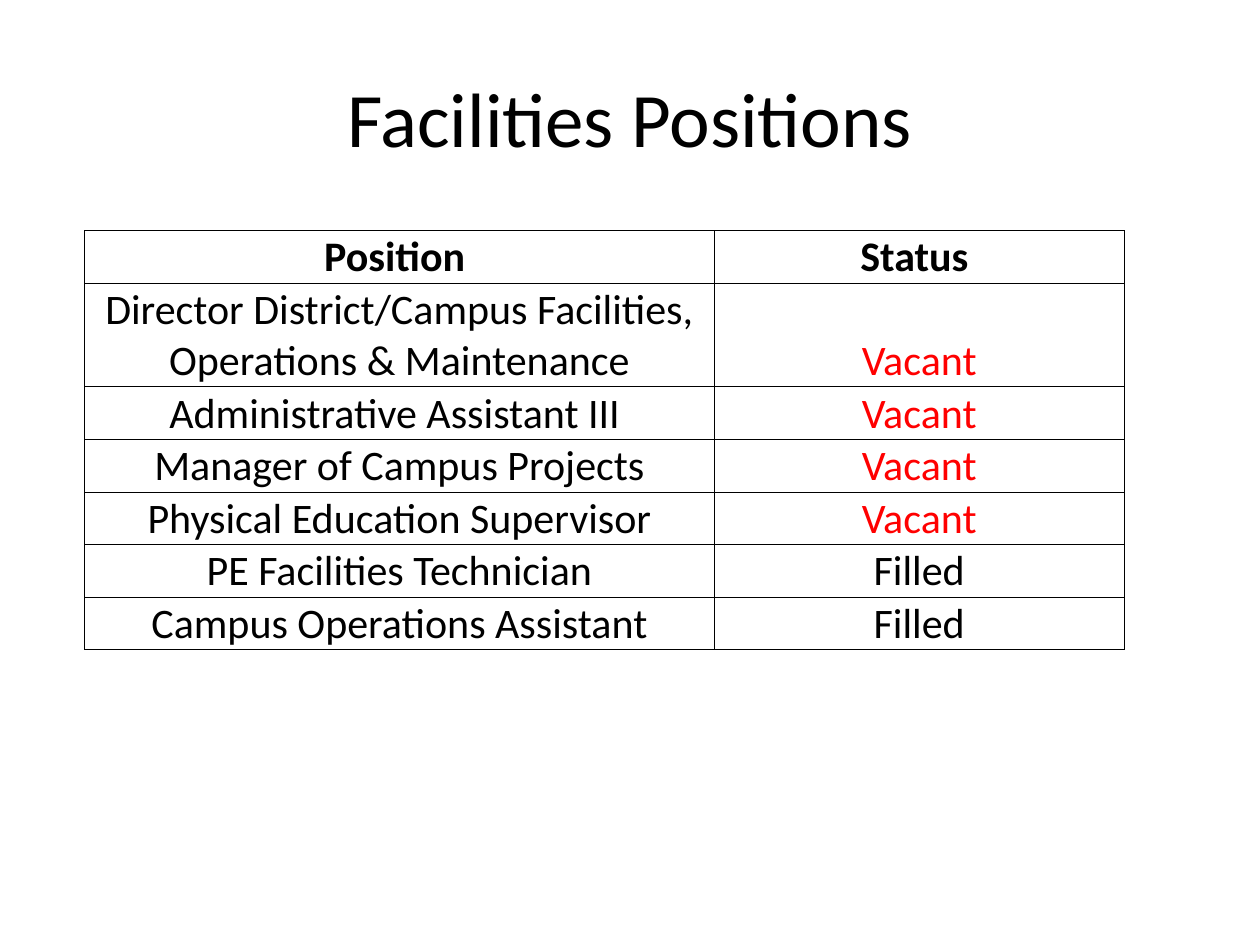
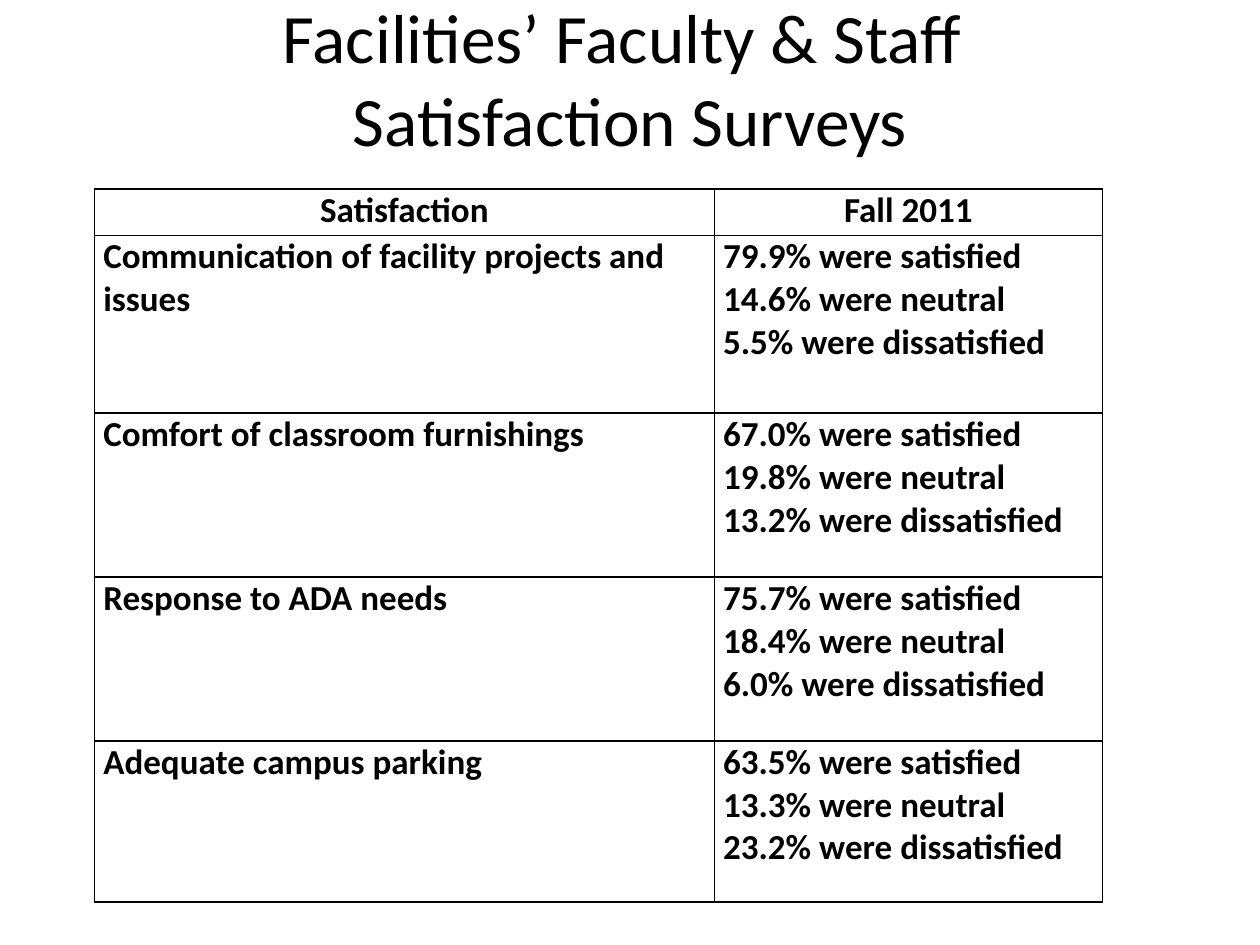
import pptx
import pptx.util
import pptx.dml.color
import pptx.enum.text
import pptx.oxml
import pptx.oxml.ns

Inches, Pt = pptx.util.Inches, pptx.util.Pt
BLACK = pptx.dml.color.RGBColor(0, 0, 0)
RED = pptx.dml.color.RGBColor(255, 0, 0)
ALIGN = pptx.enum.text.PP_ALIGN
ANCHOR = pptx.enum.text.MSO_ANCHOR
FONT = "Calibri"

deck = pptx.Presentation()
deck.slide_width, deck.slide_height = Inches(10), Inches(7.5)
wide, high = deck.slide_width, deck.slide_height


def style(frame, size, bold, color, align):
    for para in frame.paragraphs:
        para.alignment = align
        for run in para.runs:
            run.font.name = FONT
            run.font.size = Pt(size)
            run.font.bold = bold
            run.font.color.rgb = color


def edge(cell, width):
    for side in ("L", "R", "T", "B"):
        line = pptx.oxml.parse_xml(
            f'<a:ln{side} {pptx.oxml.ns.nsdecls("a")} w="{Pt(width)}">'
            f'<a:solidFill><a:srgbClr val="{BLACK}"/></a:solidFill></a:ln{side}>')
        cell._tc.get_or_add_tcPr().append(line)


jobs = [
    ("Position ", "Status "),
    ("Director District/Campus Facilities, Operations & Maintenance", "Vacant"),
    ("Administrative Assistant III ", "Vacant"),
    ("Manager of Campus Projects", "Vacant"),
    ("Physical Education Supervisor", "Vacant"),
    ("PE Facilities Technician", "Filled"),
    ("Campus Operations Assistant", "Filled"),
]
polls = [
    ("Communication of facility projects and issues", 79.9, 14.6, 5.5),
    ("Comfort of classroom furnishings", 67.0, 19.8, 13.2),
    ("Response to ADA needs", 75.7, 18.4, 6.0),
    ("Adequate campus parking", 63.5, 13.3, 23.2),
]
moods = ("satisfied", "neutral", "dissatisfied")
survey = [("Satisfaction", "Fall 2011")]
for topic, *rates in polls:
    lines = [f"{rate:.1f}% were {mood}" for rate, mood in zip(rates, moods)]
    survey.append((topic, "\n".join(lines)))

pages = [
    dict(title="Facilities Positions", size=44, tall=1.25, data=jobs,
         left=0.67, top=1.83, cols=(5, 3.25), rows=[0.41, 0.82] + [0.41] * 5,
         text=24, bold=False, align=ALIGN.CENTER, anchor=ANCHOR.BOTTOM,
         inset=(0.01, 0.01, 0.01, 0), line=0.5),
    dict(title="Facilities’ Faculty & Staff \vSatisfaction Surveys", size=39.6,
         tall=0.62, data=survey,
         left=0.75, top=1.5, cols=(4.92, 3.08), rows=[0.37, 1.41, 1.3, 1.3, 1.28],
         text=20, bold=True, align=ALIGN.LEFT, anchor=ANCHOR.TOP,
         inset=(0.07, 0, 0.07, 0), line=1),
]

for page in pages:
    slide = deck.slides.add_slide(deck.slide_layouts[5])
    title = slide.shapes.title
    title.left, title.top = int(wide * 0.05), int(high * 0.04)
    title.width, title.height = int(wide * 0.9), Inches(page["tall"])
    frame = title.text_frame
    frame.text = page["title"]
    frame.word_wrap = True
    frame.auto_size = pptx.enum.text.MSO_AUTO_SIZE.NONE
    frame.vertical_anchor = ANCHOR.MIDDLE
    style(frame, page["size"], False, BLACK, ALIGN.CENTER)

    cols, rows = page["cols"], page["rows"]
    table = slide.shapes.add_table(
        len(rows), len(cols), Inches(page["left"]), Inches(page["top"]),
        Inches(sum(cols)), Inches(sum(rows))).table
    table.first_row = table.horz_banding = False
    for col, width in zip(table.columns, cols):
        col.width = Inches(width)
    for row, height in zip(table.rows, rows):
        row.height = Inches(height)

    for r, texts in enumerate(page["data"]):
        for c, text in enumerate(texts):
            cell = table.cell(r, c)
            cell.text_frame.text = text
            cell.vertical_anchor = page["anchor"]
            (cell.margin_left, cell.margin_top,
             cell.margin_right, cell.margin_bottom) = map(Inches, page["inset"])
            edge(cell, page["line"])
            cell.fill.background()
            style(cell.text_frame, page["text"], r == 0 or page["bold"],
                  RED if text == "Vacant" else BLACK,
                  ALIGN.CENTER if r == 0 else page["align"])

deck.save("out.pptx")
